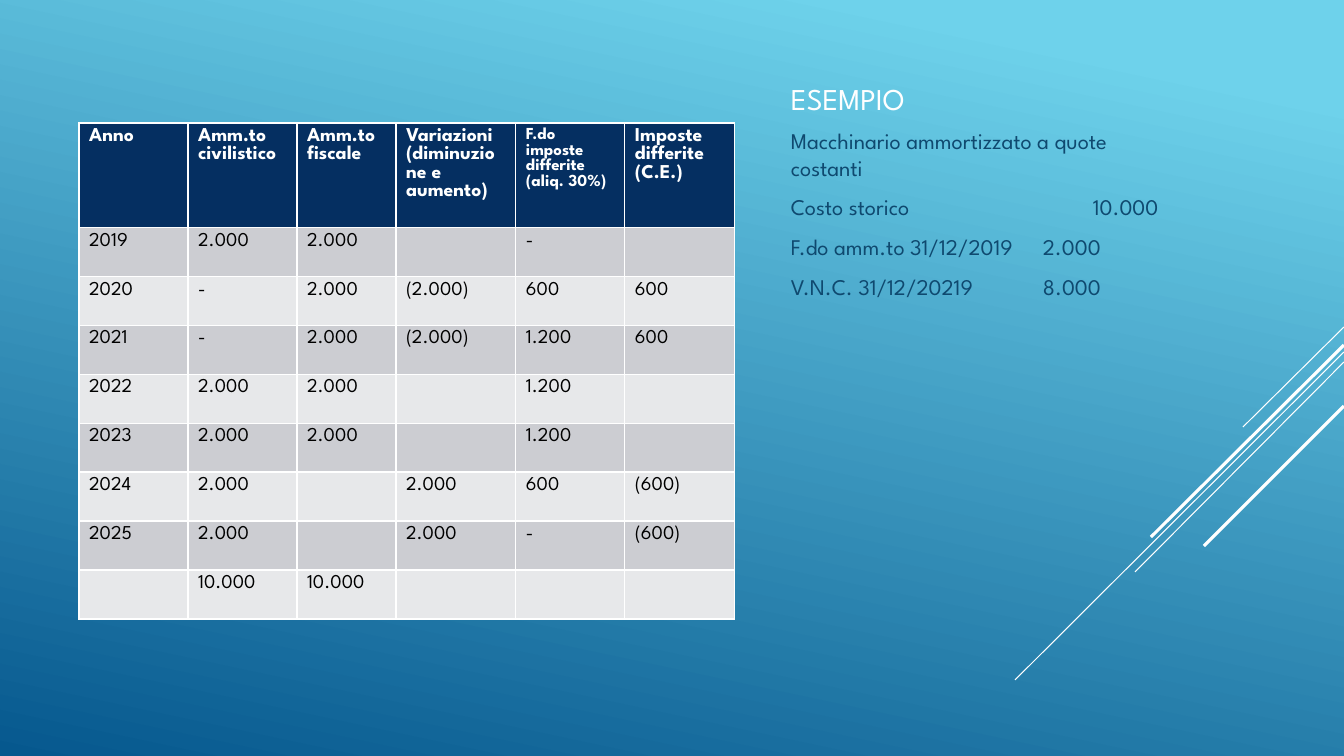
from lxml import etree
from pptx import Presentation
from pptx.dml.color import RGBColor
from pptx.enum.shapes import MSO_CONNECTOR
from pptx.enum.text import MSO_ANCHOR
from pptx.oxml.ns import qn
from pptx.util import Emu, Pt

STRAIGHT = MSO_CONNECTOR.STRAIGHT
TOP, BOTTOM = MSO_ANCHOR.TOP, MSO_ANCHOR.BOTTOM

PX_PER_INCH = 100.8
FONT = "League Spartan"
COLORS = {
    "sky": "6ED2EB", "deep": "06588E", "white": "FFFFFF", "black": "000000",
    "navy": "052F61", "band_dark": "CCCDD2", "band_light": "E7E8EA",
    "body": "0F496F",
}

# Slanted lines at the right edge: start y, end x, end y, width in points
SLANTS = [
    (327, 1243, 427, 0.75),
    (352, 1015, 680, 0.75),
    (362, 1135, 572, 0.75),
    (345, 1151, 537, 2.25),
    (406, 1204, 546, 2.25),
]

# The header row grows to fit its text
COLUMN_WIDTHS = [109, 109, 99, 120, 109, 110]
ROW_HEIGHT = 49
HEADER = [
    "Anno", "Amm.to civilistico", "Amm.to fiscale",
    "Variazioni (diminuzione e aumento)",
    "F.do imposte differite (aliq. 30%)", "Imposte differite (C.E.)",
]
FUND_COLUMN = 4
ROWS = [
    ["2019", "2.000", "2.000", "", "-", ""],
    ["2020", "-", "2.000", "(2.000)", "600", "600"],
    ["2021", "-", "2.000", "(2.000)", "1.200", "600"],
    ["2022", "2.000", "2.000", "", "1.200", ""],
    ["2023", "2.000", "2.000", "", "1.200", ""],
    ["2024", "2.000", "", "2.000", "600", "(600)"],
    ["2025", "2.000", "", "2.000", "-", "(600)"],
    ["", "10.000", "10.000", "", "", ""],
]

BODY = [
    "Macchinario ammortizzato a quote costanti",
    "Costo storico\t\t\t\t10.000",
    "F.do amm.to 31/12/2019 \t2.000",
    "V.N.C. 31/12/20219\t\t8.000",
]
BODY_FORMAT = {"space_before": Pt(3.2), "space_after": Pt(6), "line_spacing": 1.0}
TAB_STOPS = [50, 101, 151, 202, 252, 302]


def px(n):
    return Emu(round(n * 914400 / PX_PER_INCH))


def rgb(name):
    return RGBColor.from_string(COLORS[name])


def set_attributes(target, values):
    for name, value in values.items():
        setattr(target, name, value)


def add_run(p, text, size, color, bold=False):
    r = p.add_run()
    r.text = text
    set_attributes(r.font, {"name": FONT, "size": Pt(size), "bold": bold})
    r.font.color.rgb = rgb(color)


def set_background(s):
    fill = s.background.fill
    fill.gradient()
    fill.gradient_angle = 360 - 102
    for stop, position, name in zip(fill.gradient_stops, (0.1, 1), ("sky", "deep")):
        stop.position = position
        stop.color.rgb = rgb(name)


def add_slant(s, y1, x2, y2, width):
    line = s.shapes.add_connector(STRAIGHT, px(1344), px(y1), px(x2), px(y2))
    line.line.color.rgb = rgb("white")
    line.line.width = Pt(width)
    etree.SubElement(line._element.spPr, qn("a:effectLst"))


def add_text(s, box, lines, size, color, anchor=TOP, paragraph_format=None):
    tf = s.shapes.add_textbox(*map(px, box)).text_frame
    set_attributes(tf, {"word_wrap": True, "vertical_anchor": anchor})
    for i, text in enumerate(lines):
        p = tf.add_paragraph() if i else tf.paragraphs[0]
        set_attributes(p, paragraph_format or {})
        add_run(p, text, size, color)
        if "\t" in text:
            add_tab_stops(p)


def add_tab_stops(p):
    tabs = etree.SubElement(p._p.get_or_add_pPr(), qn("a:tabLst"))
    for stop in TAB_STOPS:
        etree.SubElement(tabs, qn("a:tab"), pos=str(px(stop)), algn="l")


def add_depreciation_table(s, left, top):
    data = [HEADER] + ROWS
    size = px(sum(COLUMN_WIDTHS)), px(ROW_HEIGHT * len(data))
    table = s.shapes.add_table(
        len(data), len(HEADER), px(left), px(top), *size).table
    for column, width in zip(table.columns, COLUMN_WIDTHS):
        column.width = px(width)
    for i, row in enumerate(table.rows):
        row.height = px(ROW_HEIGHT)
        header = i == 0
        fill = "navy" if header else "band_dark" if i % 2 else "band_light"
        for j, (cell, text) in enumerate(zip(row.cells, data[i])):
            cell.fill.solid()
            cell.fill.fore_color.rgb = rgb(fill)
            if text:
                points = 12 if header and j == FUND_COLUMN else 14
                color = "white" if header else "black"
                add_run(cell.text_frame.paragraphs[0], text, points, color, header)


def main():
    prs = Presentation()
    prs.slide_width, prs.slide_height = px(1344), px(756)
    s = prs.slides.add_slide(prs.slide_layouts[6])

    # Backdrop
    set_background(s)
    for slant in SLANTS:
        add_slant(s, *slant)

    # Heading, table and machine data
    add_text(s, (781, 76, 403, 46), ["ESEMPIO"], 21.6, "white", BOTTOM)
    add_depreciation_table(s, 79, 123)
    add_text(s, (781, 122, 403, 352), BODY, 16, "body",
             paragraph_format=BODY_FORMAT)

    prs.save("out.pptx")


if __name__ == "__main__":
    main()
